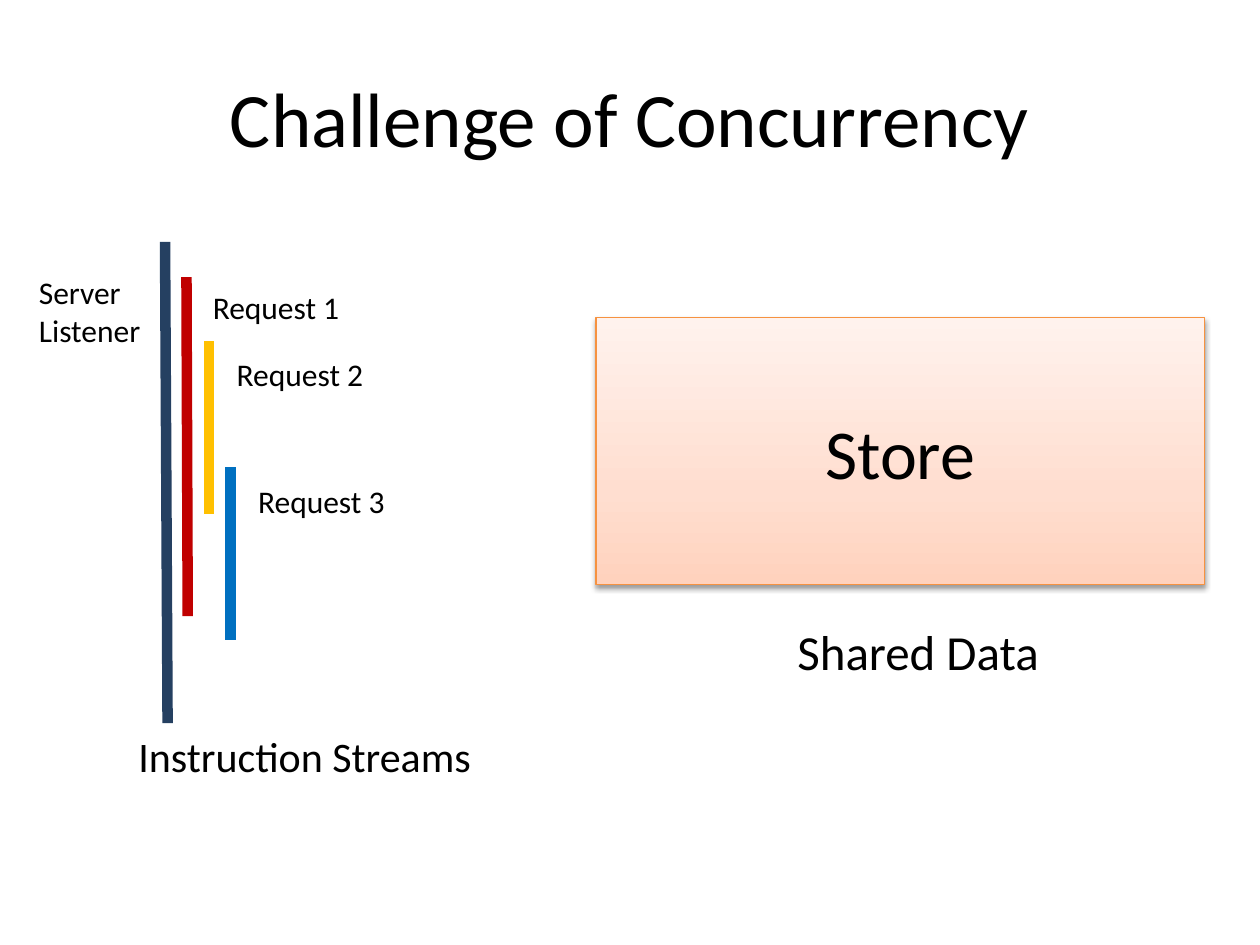
from copy import deepcopy
from lxml.etree import SubElement
from pptx import Presentation
from pptx.dml.color import RGBColor
from pptx.enum.shapes import MSO_CONNECTOR, MSO_SHAPE
from pptx.enum.text import MSO_ANCHOR, MSO_AUTO_SIZE, PP_ALIGN
from pptx.oxml import parse_xml
from pptx.oxml.ns import nsdecls, qn
from pptx.util import Inches, Pt


def rgb(color):
    return RGBColor.from_string(color)


def write(tf, text, size, align=PP_ALIGN.LEFT, anchor=MSO_ANCHOR.TOP, wrap=False,
          grow=MSO_AUTO_SIZE.SHAPE_TO_FIT_TEXT, color="000000"):
    tf.word_wrap = wrap
    tf.auto_size = grow
    tf.vertical_anchor = anchor
    for i, line in enumerate(text.split("\n")):
        p = tf.add_paragraph() if i else tf.paragraphs[0]
        p.alignment = align
        r = p.add_run()
        r.text = line
        r.font.size = Pt(size)
        r.font.name = "Calibri"
        r.font.color.rgb = rgb(color)


prs = Presentation()
prs.slide_width, prs.slide_height = Inches(10), Inches(7.5)
slide = prs.slides.add_slide(prs.slide_layouts[5])

title = slide.shapes.title
title.left, title.top = Inches(0.5), Inches(0.3)
title.width, title.height = Inches(9), Inches(1.25)
write(title.text_frame, "Challenge of Concurrency", 44, align=PP_ALIGN.CENTER,
      anchor=MSO_ANCHOR.MIDDLE, wrap=True, grow=MSO_AUTO_SIZE.NONE)

store = slide.shapes.add_shape(MSO_SHAPE.RECTANGLE, Inches(4.73), Inches(2.52),
                               Inches(4.83), Inches(2.12))
store.fill.gradient()
store.fill.gradient_angle = 90
first = store._element.spPr.find(".//" + qn("a:gs"))
first.addnext(deepcopy(first))
stops = [(0, "FFD2BD"), (0.35, "FFDED0"), (1, "FFF2ED")]
for stop, (position, color) in zip(store.fill.gradient_stops, stops):
    stop.position = position
    stop.color.rgb = rgb(color)
store.line.color.rgb = rgb("F69240")
store.line.width = Pt(0.75)
store._element.spPr.append(parse_xml(
    f'<a:effectLst {nsdecls("a")}>'
    '<a:outerShdw blurRad="39370" dist="20320" dir="5400000" rotWithShape="0">'
    '<a:srgbClr val="000000"><a:alpha val="38000"/></a:srgbClr>'
    '</a:outerShdw></a:effectLst>'))
write(store.text_frame, "Store", 40, align=PP_ALIGN.CENTER,
      anchor=MSO_ANCHOR.MIDDLE, wrap=True, grow=MSO_AUTO_SIZE.NONE)

streams = [
    (1.31, 1.92, 1.33, 5.74, "254061"),
    (1.48, 2.2, 1.49, 4.89, "C00000"),
    (1.66, 2.71, 1.66, 4.08, "FFC000"),
    (1.83, 3.71, 1.83, 5.08, "0070C0"),
]
for x1, y1, x2, y2, color in streams:
    line = slide.shapes.add_connector(MSO_CONNECTOR.STRAIGHT, Inches(x1), Inches(y1),
                                      Inches(x2), Inches(y2))
    line.line.color.rgb = rgb(color)
    line.line.width = Pt(6)
    SubElement(line._element.spPr, qn("a:effectLst"))

labels = [
    ("Instruction Streams", 1, 5.75, 2.87, 0.5, 24),
    ("Shared Data", 6.23, 4.88, 2.14, 0.57, 28),
    ("Server\nListener", 0.21, 2.12, 1.02, 0.71, 18),
    ("Request 1", 1.59, 2.24, 1.22, 0.4, 18),
    ("Request 2", 1.78, 2.77, 1.22, 0.4, 18),
    ("Request 3", 1.95, 3.78, 1.22, 0.4, 18),
]
for text, x, y, w, h, size in labels:
    box = slide.shapes.add_textbox(Inches(x), Inches(y), Inches(w), Inches(h))
    write(box.text_frame, text, size)

prs.save("out.pptx")
